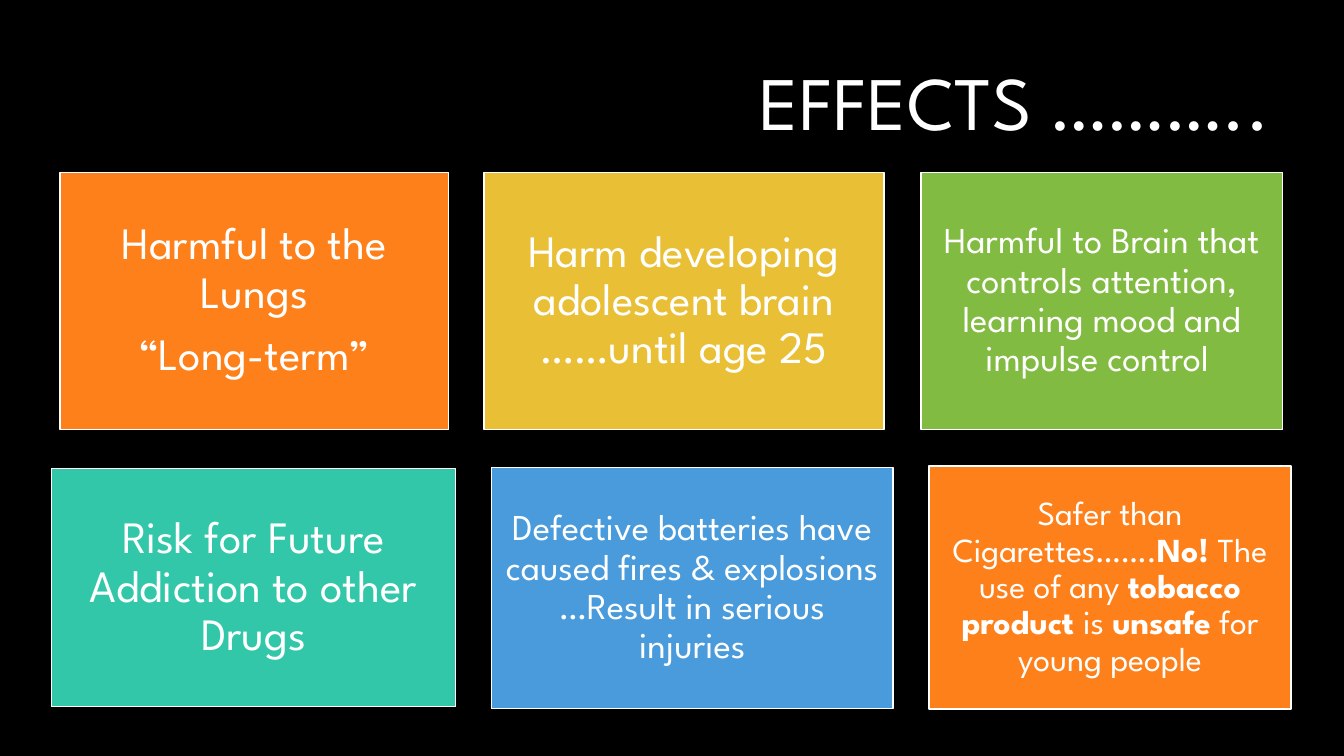
import pptx
import pptx.dml.color
import pptx.enum.shapes
import pptx.enum.text
import pptx.util

Pt = pptx.util.Pt
RGB = pptx.dml.color.RGBColor.from_string
ALIGN = pptx.enum.text.PP_ALIGN
MIDDLE = pptx.enum.text.MSO_ANCHOR.MIDDLE
FONT = "League Spartan"
COLORS = {
    "black": "000000", "white": "FFFFFF", "orange": "FE801A",
    "yellow": "E9BF35", "green": "81BB42", "teal": "32C7A9", "blue": "4A9BDC",
}


def add_run(p, text, size, bold=False):
    r = p.add_run()
    r.text = text
    r.font.name = FONT
    r.font.size = Pt(size)
    r.font.bold = bold
    r.font.color.rgb = RGB(COLORS["white"])


prs = pptx.Presentation()
prs.slide_width, prs.slide_height = Pt(960), Pt(540)
s = prs.slides.add_slide(prs.slide_layouts[5])
s.background.fill.solid()
s.background.fill.fore_color.rgb = RGB(COLORS["black"])

# Title
title = s.shapes.title
title.left, title.top, title.width, title.height = Pt(236.2), Pt(25.2), Pt(678.2), Pt(101.5)
tf = title.text_frame
tf.word_wrap = True
tf.auto_size = pptx.enum.text.MSO_AUTO_SIZE.NONE
tf.vertical_anchor = MIDDLE
p = tf.paragraphs[0]
p.alignment = ALIGN.RIGHT
p.line_spacing = 0.9
add_run(p, "EFFECTS ………..", 54)

# Cards: box, fill, text size, inset, paragraphs of (text, bold) runs
cards = [
    ((43, 123.1, 277.4, 183.6), "orange", 32, 9.6,
     [[("Harmful to the Lungs", False)], [("“Long-term”", False)]]),
    ((345.6, 123.1, 286, 183.6), "yellow", 32, 9.6,
     [[("Harm developing adolescent brain ……until age 25", False)]]),
    ((657.8, 123.1, 258.5, 183.6), "green", 26, 7.8,
     [[("Harmful to Brain that controls attention, learning mood and impulse control ", False)]]),
    ((36.8, 334.8, 288.7, 170), "teal", 32, 9.6,
     [[("Risk for Future Addiction to other Drugs", False)]]),
    ((351.2, 334, 286.6, 172), "blue", 26, 7.8,
     [[("Defective batteries have caused fires & explosions …Result in serious injuries", False)]]),
    ((663.6, 332.8, 258.5, 173.8), "orange", 24, 7.2,
     [[("Safer than Cigarettes…….", False), ("No! ", True), ("The use of any ", False),
       ("tobacco product ", True), ("is ", False), ("unsafe", True),
       (" for young people", False)]]),
]
for box, color, size, inset, paragraphs in cards:
    sp = s.shapes.add_shape(pptx.enum.shapes.MSO_SHAPE.RECTANGLE, *map(Pt, box))
    sp.shadow.inherit = False
    sp.fill.solid()
    sp.fill.fore_color.rgb = RGB(COLORS[color])
    sp.line.color.rgb = RGB(COLORS["white"])
    sp.line.width = Pt(1)
    tf = sp.text_frame
    tf.word_wrap = True
    tf.vertical_anchor = MIDDLE
    tf.margin_left = tf.margin_right = tf.margin_top = tf.margin_bottom = Pt(inset)
    for i, runs in enumerate(paragraphs):
        p = tf.add_paragraph() if i else tf.paragraphs[0]
        p.alignment = ALIGN.CENTER
        p.line_spacing = 0.9
        if i:
            p.space_before = Pt(10)
        for text, bold in runs:
            add_run(p, text, size, bold)

prs.save("out.pptx")
